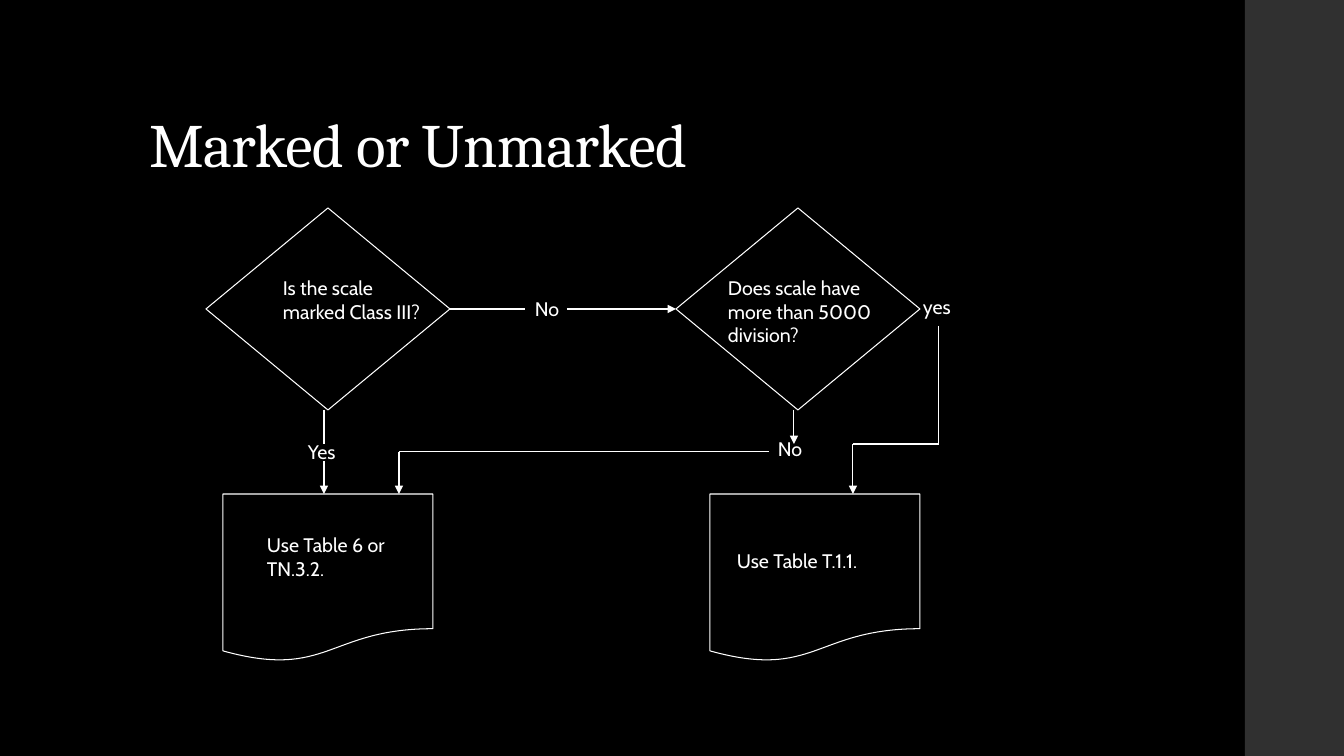
from lxml import etree
from pptx import Presentation
from pptx.dml.color import RGBColor
from pptx.enum.shapes import MSO_CONNECTOR, MSO_SHAPE
from pptx.enum.text import MSO_ANCHOR, PP_ALIGN
from pptx.oxml.ns import qn
from pptx.util import Pt

STRAIGHT = MSO_CONNECTOR.STRAIGHT
RECT, DIAMOND = MSO_SHAPE.RECTANGLE, MSO_SHAPE.DIAMOND
DOCUMENT = MSO_SHAPE.FLOWCHART_DOCUMENT
LEFT, BOTTOM = PP_ALIGN.LEFT, MSO_ANCHOR.BOTTOM
SIDE_LEFT, SIDE_RIGHT = 1, 3

COLORS = {"black": "000000", "white": "FFFFFF", "band": "303030"}
TITLE_FONT, BODY_FONT = "Cambria", "Cabin"
WIDTH, HEIGHT = 1344, 756
DECISION_SIZE = (244, 202)
RESULT_SIZE = (210, 168)


def px(n):
    return round(n * 914400 / 100.8)


def rgb(name):
    return RGBColor.from_string(COLORS[name])


def add_run(p, text, font, size):
    r = p.add_run()
    r.text = text
    r.font.name = font
    r.font.size = Pt(size)
    r.font.color.rgb = rgb("white")
    return r


def set_title(slide, text):
    sp = slide.shapes.title
    sp.left, sp.top, sp.width, sp.height = px(139), px(40), px(1068), px(146)
    tf = sp.text_frame
    tf.vertical_anchor = BOTTOM
    p = tf.paragraphs[0]
    p.alignment = LEFT
    p.line_spacing = 0.9
    r = add_run(p, text, TITLE_FONT, 44)
    r.font._element.set("spc", "-50")


def add_block(slide, kind, x, y, size, fill="black", line="white"):
    sp = slide.shapes.add_shape(kind, px(x), px(y), px(size[0]), px(size[1]))
    sp.shadow.inherit = False
    sp.fill.solid()
    sp.fill.fore_color.rgb = rgb(fill)
    if line:
        sp.line.color.rgb = rgb(line)
        sp.line.width = Pt(0.75)
    else:
        sp.line.fill.background()
    return sp


def add_label(slide, text, x, y, w, h=33):
    sp = slide.shapes.add_textbox(px(x), px(y), px(w), px(h))
    tf = sp.text_frame
    tf.word_wrap = True
    add_run(tf.paragraphs[0], text, BODY_FONT, 14)


def add_line(slide, start, end, arrow=False):
    s = slide.shapes.add_connector(STRAIGHT, *map(px, start + end))
    s.line.color.rgb = rgb("white")
    s.line.width = Pt(0.75)
    if arrow:
        tail = etree.SubElement(s.line._get_or_add_ln(), qn("a:tailEnd"))
        tail.set("type", "triangle")
    etree.SubElement(s._element.spPr, qn("a:effectLst"))
    return s


def add_route(slide, *points):
    """Draw straight segments through the points, with an arrow at the last."""
    for i in range(1, len(points)):
        add_line(slide, points[i - 1], points[i], arrow=i == len(points) - 1)


def main():
    prs = Presentation()
    prs.slide_width, prs.slide_height = px(WIDTH), px(HEIGHT)
    slide = prs.slides.add_slide(prs.slide_layouts[5])

    # Background, side band and title
    slide.background.fill.solid()
    slide.background.fill.fore_color.rgb = rgb("black")
    add_block(slide, RECT, 1245, 0, (WIDTH - 1245, HEIGHT), "band", None)
    set_title(slide, "Marked or Unmarked")

    # Decisions and results
    marked = add_block(slide, DIAMOND, 206, 208, DECISION_SIZE)
    divisions = add_block(slide, DIAMOND, 676, 208, DECISION_SIZE)
    for x in (223, 710):
        add_block(slide, DOCUMENT, x, 494, RESULT_SIZE)

    # Lines between the two decisions
    add_line(slide, (450, 309), (525, 309)).begin_connect(marked, SIDE_RIGHT)
    to_divisions = add_line(slide, (567, 309), (676, 309), arrow=True)
    to_divisions.end_connect(divisions, SIDE_LEFT)

    # Lines down to the results
    add_line(slide, (324, 410), (324, 444))
    add_route(slide, (324, 461), (324, 494))
    add_route(slide, (794, 410), (794, 444))
    add_route(slide, (769, 452), (399, 452), (399, 494))
    add_route(slide, (939, 326), (939, 444), (853, 444), (853, 494))

    # Text of the decisions, results and answers
    add_label(slide, "Is the scale marked Class III?", 273, 271, 159, 81)
    add_label(slide, "Does scale have more than 5000 division?", 718, 271, 176, 81)
    add_label(slide, "Use Table 6 or TN.3.2.", 257, 528, 193, 57)
    add_label(slide, "Use Table T.1.1.", 727, 544, 193)
    add_label(slide, "No", 525, 292, 76)
    add_label(slide, "Yes", 298, 435, 101)
    add_label(slide, "yes", 913, 290, 67)
    add_label(slide, "No", 768, 432, 76)

    prs.save("out.pptx")


if __name__ == "__main__":
    main()
